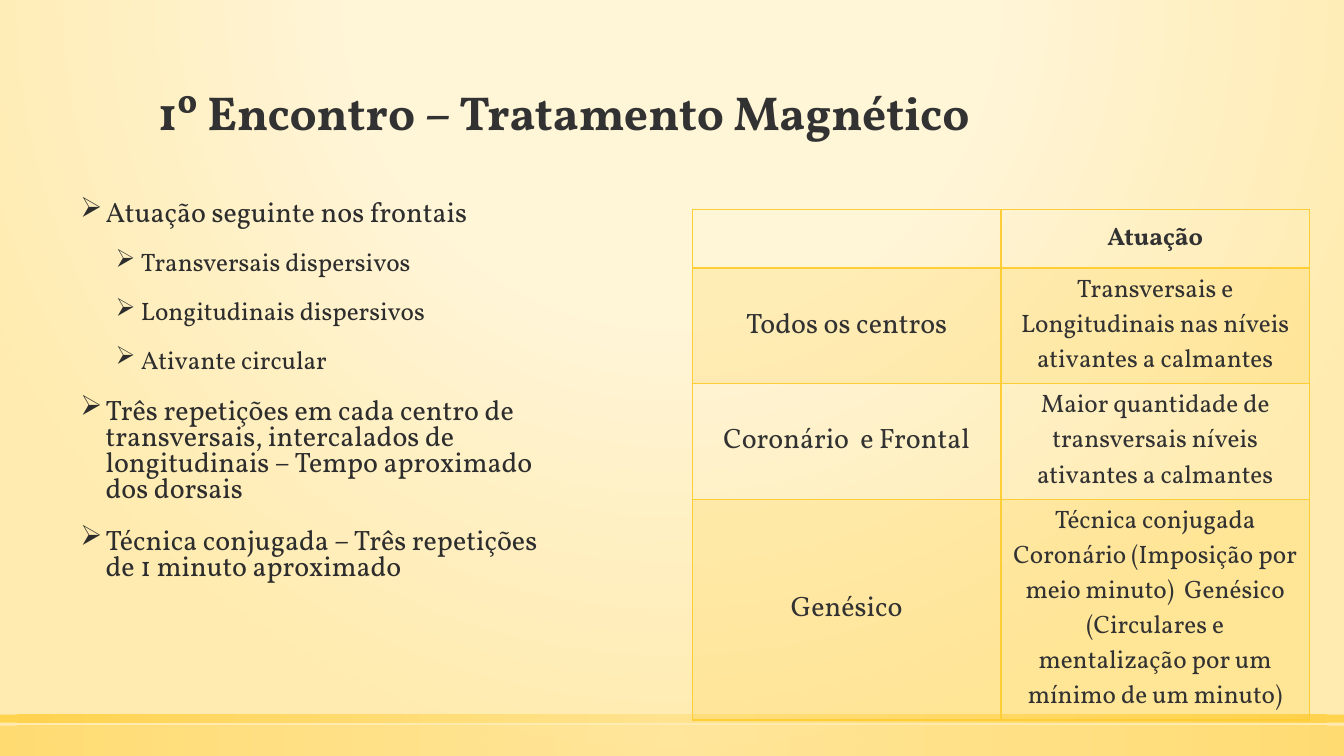
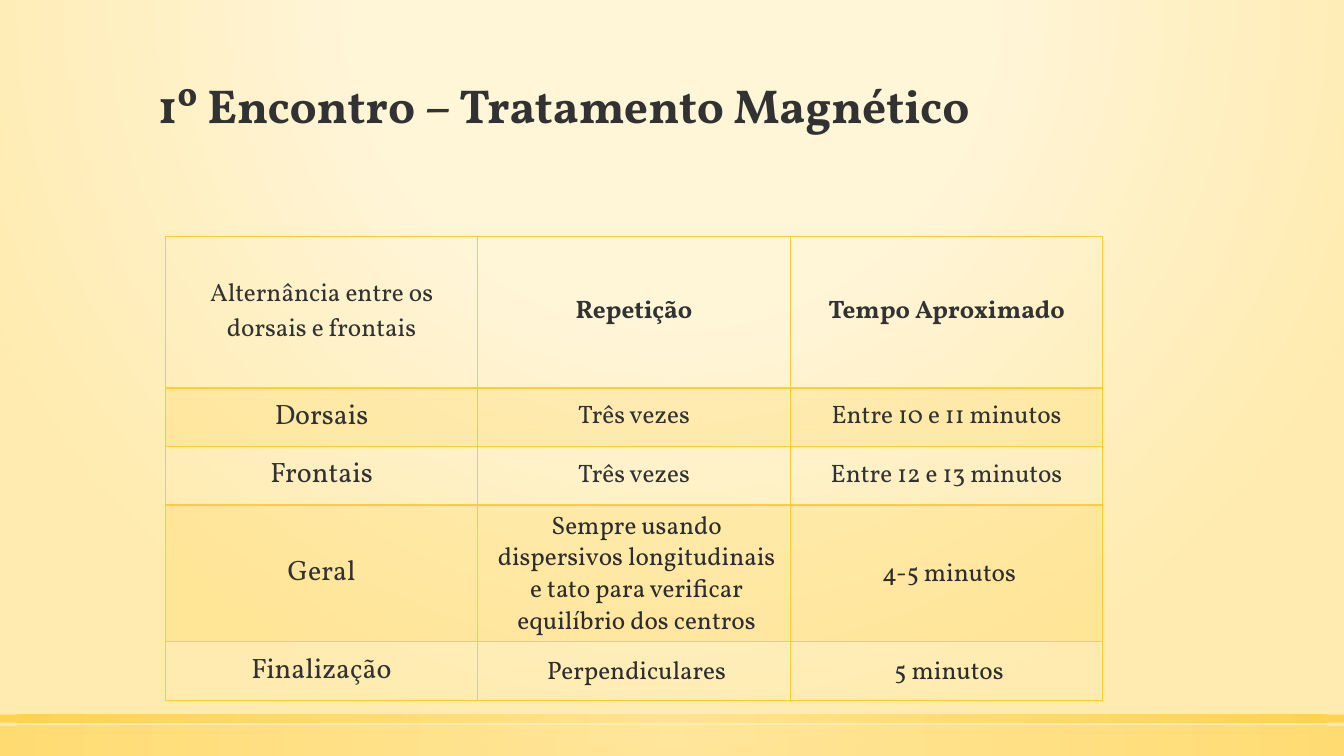
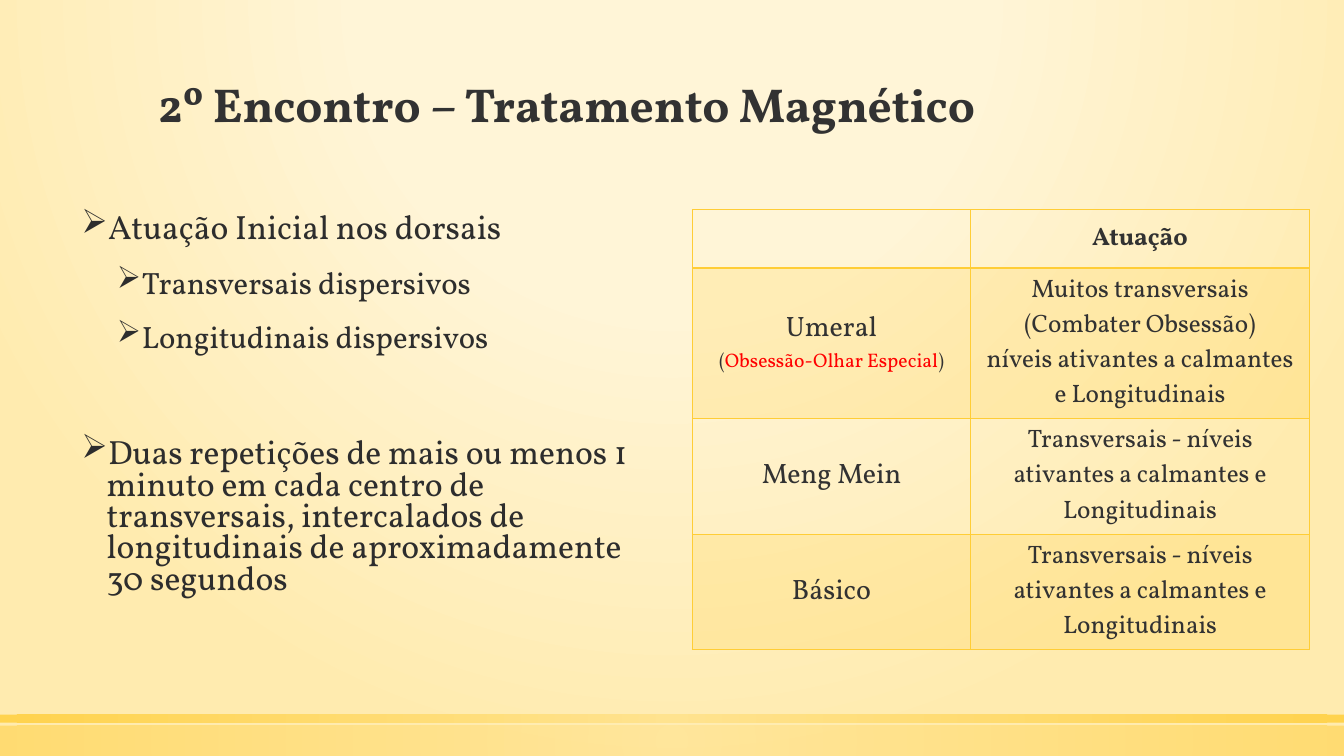
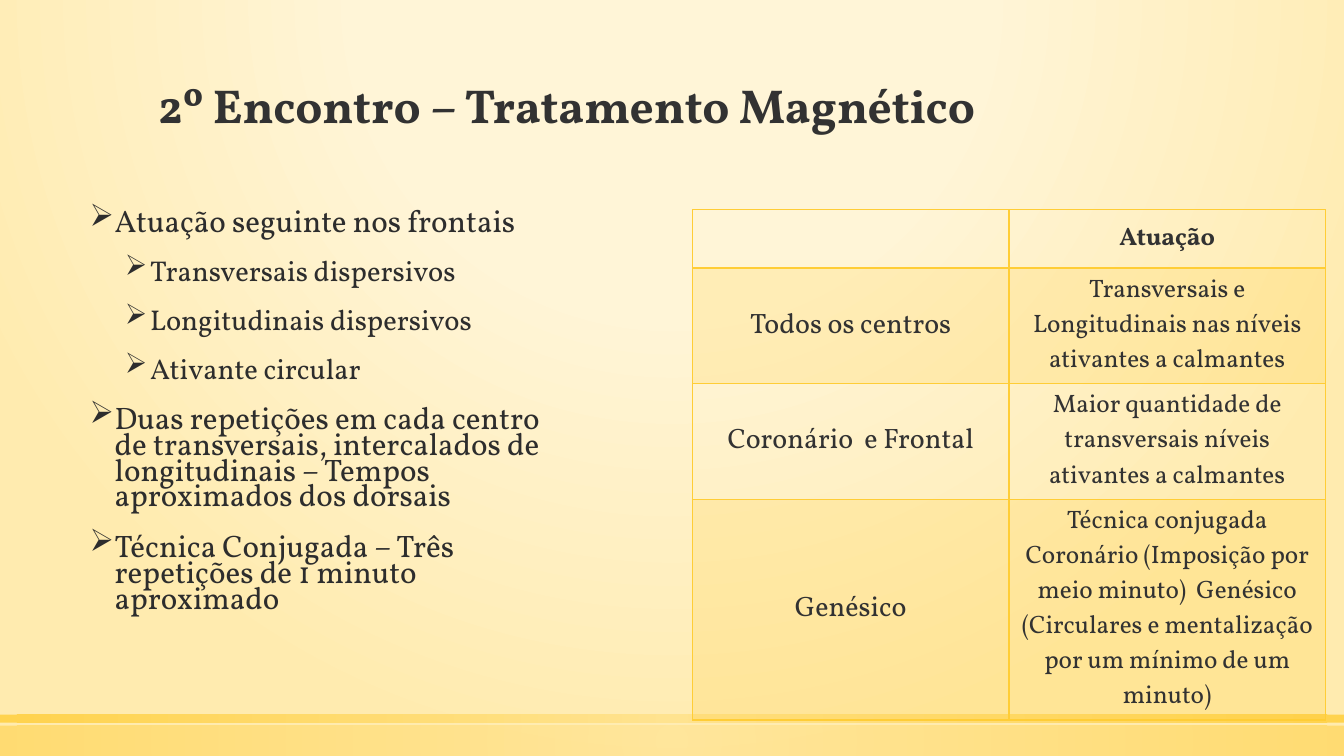
from dataclasses import dataclass
from typing import NamedTuple

from pptx import Presentation
from pptx.dml.color import RGBColor
from pptx.enum import shapes, text
from pptx.oxml import parse_xml
from pptx.oxml.ns import nsdecls, qn
from pptx.util import Emu, Inches, Pt

UNIT = Inches(1) / 6
SLIDE_COLS, SLIDE_ROWS = 80, 45
FONT = "Vollkorn"
COLORS = {
    "title": "323232",
    "body": "2D2D2D",
    "alert": "FF0000",
    "gold": "FFCD36",
    "light_gold": "FFE186",
    "cream": "FFF5D7",
    "sand": "FFEBAF",
}
HEADER_ROW = 3.48


class Area(NamedTuple):
    col: float
    row: float
    cols: float
    rows: float


class Stop(NamedTuple):
    share: int
    color: str
    opacity: int = 100


class Focus(NamedTuple):
    left: int
    top: int
    right: int
    bottom: int


class Run(NamedTuple):
    words: str
    color: str = "title"


class Bullet(NamedTuple):
    words: str
    level: int = 0
    before: int = 18


class Band(NamedTuple):
    area: Area
    opacity: int


@dataclass(frozen=True)
class Line:
    runs: tuple[Run, ...]
    size: float
    bold: bool = False
    tight: bool = False


@dataclass(frozen=True)
class BulletList:
    area: Area
    sizes: tuple[float, float]
    spacing: float
    bullets: tuple[Bullet, ...]


@dataclass(frozen=True)
class Grid:
    col: float
    row: float
    widths: tuple[float, ...]
    heights: tuple[float, ...]
    cells: tuple[tuple[tuple[Line, ...], ...], ...]


@dataclass(frozen=True)
class Page:
    title: str
    title_rows: float
    grid: Grid
    bullet_list: BulletList | None = None


BANDS = (
    Band(Area(0, 43.2, SLIDE_COLS, 1.8), 50),
    Band(Area(0, 42.54, SLIDE_COLS, 0.48), 80),
)


def head(words: str) -> tuple[Line, ...]:
    return (Line((Run(words),), 18, bold=True),)


def topic(words: str) -> tuple[Line, ...]:
    return (Line((Run(words),), 20),)


def detail(*lines: str) -> tuple[Line, ...]:
    return tuple(Line((Run(words),), 18) for words in lines)


def tight(words: str) -> tuple[Line, ...]:
    return (Line((Run(words, "body"),), 18, tight=True),)


FRONT_CELLS = (
    ((), head("Atuação")),
    (topic("Todos os centros"),
     detail("Transversais e Longitudinais nas níveis ativantes a calmantes")),
    (topic("Coronário  e Frontal"),
     detail("Maior quantidade de transversais níveis ativantes a calmantes")),
    (topic("Genésico"),
     detail("Técnica conjugada",
            "Coronário (Imposição por meio minuto)  Genésico (Circulares e "
            "mentalização por um mínimo de um minuto)")),
)
FRONT_HEIGHTS = (HEADER_ROW, 6.88, 6.88, 13.14)
BACK_DETAIL = detail("Transversais - níveis ativantes a calmantes e Longitudinais")
SPECIAL_CARE = Line((Run("("), Run("Obsessão-Olhar Especial", "alert"), Run(")")), 14)
STROKES = (Bullet("Transversais dispersivos", 1), Bullet("Longitudinais dispersivos", 1))
FRONT_STROKES = (Bullet("Atuação seguinte nos frontais"), *STROKES, Bullet("Ativante circular", 1))
FIRST_MEETING = "1º Encontro – Tratamento Magnético"
SECOND_MEETING = "2º Encontro – Tratamento Magnético"

PAGES = (
    Page(
        FIRST_MEETING, 5.64,
        Grid(41.22, 12.48, (18.36, 18.36), FRONT_HEIGHTS, FRONT_CELLS),
        BulletList(Area(3.9, 11.7, 30, 27), (20, 18), 0.78, (
            *FRONT_STROKES,
            Bullet("Três repetições em cada centro de transversais, intercalados de "
                   "longitudinais – Tempo aproximado dos dorsais"),
            Bullet("Técnica conjugada – Três repetições de 1 minuto aproximado"),
        )),
    ),
    Page(
        FIRST_MEETING, 5.2,
        Grid(9.84, 14.1, (18.6,) * 3, (9, HEADER_ROW, HEADER_ROW, 8.14, HEADER_ROW), (
            (detail("Alternância entre os dorsais e frontais"),
             head("Repetição"), head("Tempo Aproximado")),
            (topic("Dorsais"), detail("Três vezes"), detail("Entre 10 e 11 minutos")),
            (topic("Frontais"), detail("Três vezes"), detail("Entre 12 e 13 minutos")),
            (topic("Geral"),
             tight("Sempre usando dispersivos longitudinais e tato para verificar "
                   "equilíbrio dos centros"),
             tight("4-5 minutos")),
            (topic("Finalização"), tight("Perpendiculares"), tight("5 minutos")),
        )),
    ),
    Page(
        SECOND_MEETING, 5.16,
        Grid(41.22, 12.48, (16.56, 20.16), (HEADER_ROW, 8.96, 6.88, 6.88), (
            ((), head("Atuação")),
            ((*topic("Umeral"), SPECIAL_CARE),
             detail("Muitos transversais (Combater Obsessão)",
                    "níveis ativantes a calmantes e Longitudinais")),
            (topic("Meng Mein"), BACK_DETAIL),
            (topic("Básico"), BACK_DETAIL),
        )),
        BulletList(Area(3.96, 12.48, 34.86, 27.84), (24, 22), 0.78, (
            Bullet("Atuação Inicial nos dorsais"),
            *STROKES,
            Bullet("Duas repetições de mais ou menos 1 minuto em cada centro de "
                   "transversais, intercalados de longitudinais de aproximadamente "
                   "30 segundos", before=61),
        )),
    ),
    Page(
        SECOND_MEETING, 5.2,
        Grid(41.22, 12.48, (18.84, 18.84), FRONT_HEIGHTS, FRONT_CELLS),
        BulletList(Area(4.44, 12.3, 30, 27), (22.2, 20.4), 0.69, (
            *FRONT_STROKES,
            Bullet("Duas repetições em cada centro de transversais, intercalados de "
                   "longitudinais – Tempos aproximados dos dorsais"),
            Bullet("Técnica Conjugada – Três repetições de 1 minuto aproximado"),
        )),
    ),
)


def span(units: float) -> Emu:
    return Emu(round(units * UNIT))


def place(area: Area) -> tuple[Emu, ...]:
    return tuple(span(units) for units in area)


def rgb(color: str) -> RGBColor:
    return RGBColor.from_string(COLORS[color])


def color_xml(color: str, opacity: int = 100) -> str:
    alpha = f'<a:alpha val="{opacity * 1000}"/>' if opacity < 100 else ""
    return f'<a:srgbClr val="{COLORS[color]}">{alpha}</a:srgbClr>'


def set_glow(holder, stops: tuple[Stop, ...], focus: Focus) -> None:
    stop_xml = "".join(
        f'<a:gs pos="{stop.share * 1000}">{color_xml(stop.color, stop.opacity)}</a:gs>'
        for stop in stops
    )
    left, top, right, bottom = (share * 1000 for share in focus)
    glow = parse_xml(
        f'<a:gradFill {nsdecls("a")} rotWithShape="1"><a:gsLst>{stop_xml}</a:gsLst>'
        f'<a:path path="circle"><a:fillToRect l="{left}" t="{top}" r="{right}" '
        f'b="{bottom}"/></a:path></a:gradFill>'
    )
    holder.replace(holder.find(qn("a:gradFill")), glow)


def set_background(master) -> None:
    master.background.fill.gradient()
    set_glow(
        master.element.xpath("./p:cSld/p:bg/p:bgPr")[0],
        (Stop(0, "cream", 59), Stop(40, "cream", 66), Stop(100, "sand")),
        Focus(50, -80, 50, 180),
    )


def add_band(slide, band: Band) -> None:
    strip = slide.shapes.add_shape(shapes.MSO_SHAPE.RECTANGLE, *place(band.area))
    strip.shadow.inherit = False
    strip.line.fill.background()
    strip.fill.gradient()
    set_glow(
        strip.element.spPr,
        (Stop(0, "light_gold", band.opacity), Stop(100, "gold", band.opacity)),
        Focus(50, 50, 50, 50),
    )


def set_font(font, size: float, color: str, bold: bool = False) -> None:
    font.name = FONT
    font.size = Pt(size)
    font.bold = bold
    font.color.rgb = rgb(color)


def add_title(slide, words: str, rows: float) -> None:
    frame = slide.shapes.add_textbox(*place(Area(8.82, 3.06, 62.4, rows))).text_frame
    frame.word_wrap = True
    frame.vertical_anchor = text.MSO_ANCHOR.BOTTOM
    heading = frame.paragraphs[0]
    heading.text = words
    heading.line_spacing = 0.9
    set_font(heading.font, 34, "title", bold=True)


def paragraph_at(frame, index: int):
    return frame.add_paragraph() if index else frame.paragraphs[0]


def add_bullets(slide, bullet_list: BulletList) -> None:
    frame = slide.shapes.add_textbox(*place(bullet_list.area)).text_frame
    frame.word_wrap = True
    for index, bullet in enumerate(bullet_list.bullets):
        paragraph = paragraph_at(frame, index)
        paragraph.text = bullet.words
        paragraph.level = bullet.level
        paragraph.line_spacing = bullet_list.spacing
        paragraph.space_before = Pt(bullet.before)
        set_font(paragraph.font, bullet_list.sizes[bullet.level], "body")
        properties = paragraph._p.get_or_add_pPr()
        properties.set("marL", str(Inches(0.3 + 0.35 * bullet.level)))
        properties.set("indent", str(Inches(-0.25)))
        mark_color = parse_xml(f'<a:buClr {nsdecls("a")}>{color_xml("body")}</a:buClr>')
        mark = parse_xml(f'<a:buChar {nsdecls("a")} char="➢"/>')
        properties.find(qn("a:defRPr")).addprevious(mark_color)
        mark_color.addnext(mark)


def write_cell(cell, lines: tuple[Line, ...]) -> None:
    cell.vertical_anchor = text.MSO_ANCHOR.MIDDLE
    for index, line in enumerate(lines):
        paragraph = paragraph_at(cell.text_frame, index)
        paragraph.alignment = text.PP_ALIGN.CENTER
        if line.tight:
            paragraph.line_spacing = 0.9
            paragraph._p.get_or_add_pPr().set("marL", str(Inches(0.05)))
        set_font(paragraph.font, line.size, line.runs[0].color, line.bold)
        for part in line.runs:
            run = paragraph.add_run()
            run.text = part.words
            set_font(run.font, line.size, part.color, line.bold)


def style_cell(cell, row: int) -> None:
    cell.fill.background()
    properties = cell._tc.get_or_add_tcPr()
    if row % 2:
        tint = parse_xml(f'<a:solidFill {nsdecls("a")}>{color_xml("gold", 20)}</a:solidFill>')
        properties.replace(properties.find(qn("a:noFill")), tint)
    widths = {"lnL": 1, "lnR": 1, "lnT": 2 if row == 1 else 1, "lnB": 1 if row else 2}
    for position, (side, width) in enumerate(widths.items()):
        properties.insert(position, parse_xml(
            f'<a:{side} {nsdecls("a")} w="{Pt(width)}"><a:solidFill>'
            f'{color_xml("gold")}</a:solidFill></a:{side}>'
        ))


def add_grid(slide, grid: Grid) -> None:
    area = Area(grid.col, grid.row, sum(grid.widths), sum(grid.heights))
    table = slide.shapes.add_table(len(grid.heights), len(grid.widths), *place(area)).table
    table.horz_banding = False
    for column, width in zip(table.columns, grid.widths):
        column.width = span(width)
    for row, (height, contents) in enumerate(zip(grid.heights, grid.cells)):
        table.rows[row].height = span(height)
        for column, lines in enumerate(contents):
            cell = table.cell(row, column)
            write_cell(cell, lines)
            style_cell(cell, row)


def add_page(deck, page: Page) -> None:
    slide = deck.slides.add_slide(deck.slide_layouts[6])
    for band in BANDS:
        add_band(slide, band)
    add_title(slide, page.title, page.title_rows)
    if page.bullet_list:
        add_bullets(slide, page.bullet_list)
    add_grid(slide, page.grid)


def main() -> None:
    deck = Presentation()
    deck.slide_width = span(SLIDE_COLS)
    deck.slide_height = span(SLIDE_ROWS)
    set_background(deck.slide_master)
    for page in PAGES:
        add_page(deck, page)
    deck.save("out.pptx")


if __name__ == "__main__":
    main()
